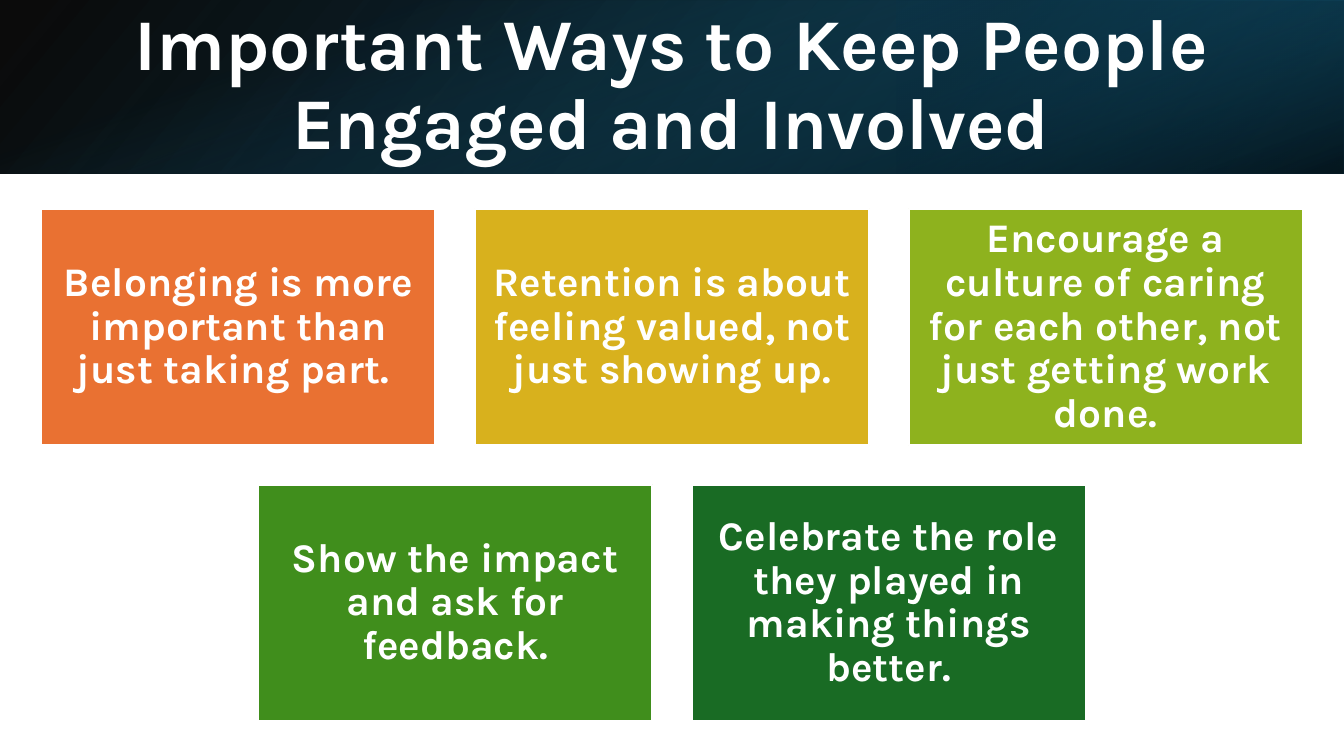
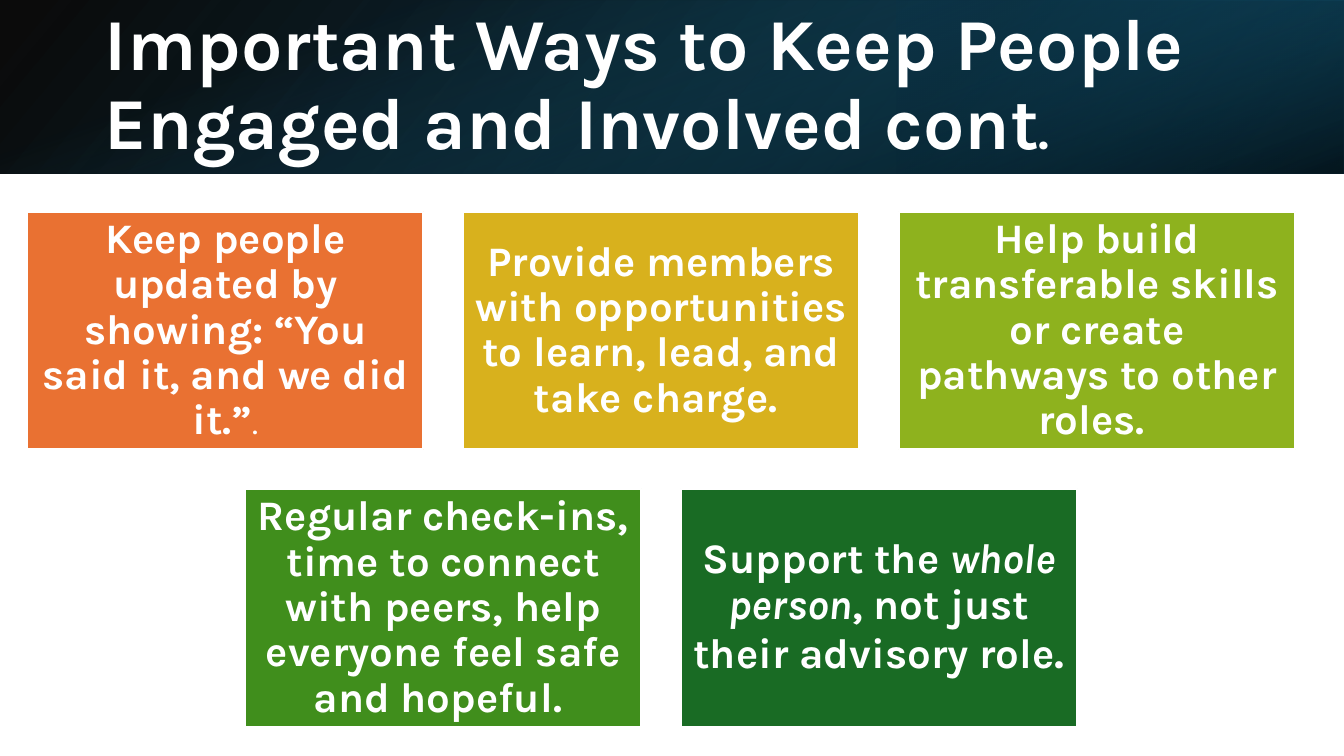
from lxml import etree
from pptx import Presentation
from pptx.dml import color
from pptx.enum import shapes, text
from pptx.oxml import ns
from pptx.util import Inches, Pt

WIDE, HIGH, BAND = 13.33, 7.5, 1.72
WHITE = "FFFFFF"
FILLS = ["E97132", "D8B11D", "8EB21E", "408E1C", "196B24"]
BANDS = [
    ((0, 0, WIDE, BAND), 0, True, 140,
     [(0, "000000", 96), (100, "104862", 100)]),
    ((8.89, 0, 4.44, BAND), 180, True, 320,
     [(19, "0B3041", 68), (100, "156082", 79)]),
    ((5.8, -5.8, BAND, WIDE), 90, False, 340,
     [(23, "156082", 0), (99, "000000", 74)]),
]
ALIGN = text.PP_ALIGN
HEAD = "Important Ways to Keep People Engaged and Involved"


def rgb(code):
    return color.RGBColor.from_string(code)


def put(item, style):
    for name, value in style.items():
        setattr(item, name, value)


def node(root, tag, **attrs):
    return etree.SubElement(root, ns.qn("a:" + tag),
                            {key: str(value) for key, value in attrs.items()})


class Deck:
    font = {"name": "Karla", "bold": True}

    def __init__(self):
        self.file = Presentation()
        self.file.slide_width = Inches(WIDE)
        self.file.slide_height = Inches(HIGH)
        self.slide = None

    def page(self):
        self.slide = self.file.slides.add_slide(self.file.slide_layouts[5])
        for band in BANDS:
            self.band(*band)

    def rect(self, area):
        shape = self.slide.shapes.add_shape(
            shapes.MSO_SHAPE.RECTANGLE, *map(Inches, area))
        shape.shadow.inherit = False
        return shape

    def band(self, area, turn, flip, angle, stops):
        shape = self.rect(area)
        shape.rotation = turn
        shape.line.fill.background()
        if flip:
            shape._element.spPr.find(ns.qn("a:xfrm")).set("flipH", "1")
        shape.fill.gradient()
        grad = shape._element.spPr.find(ns.qn("a:gradFill"))
        for child in list(grad):
            grad.remove(child)
        items = node(grad, "gsLst")
        for place, code, alpha in stops:
            stop = node(items, "gs", pos=place * 1000)
            tone = node(stop, "srgbClr", val=code)
            node(tone, "alpha", val=alpha * 1000)
        node(grad, "lin", ang=angle * 60000, scaled=0)

    def label(self, shape, runs, size, align, inset):
        frame = shape.text_frame
        put(frame, {"word_wrap": True, "auto_size": text.MSO_AUTO_SIZE.NONE,
                    "vertical_anchor": text.MSO_ANCHOR.MIDDLE, **inset})
        para = frame.paragraphs[0]
        put(para, {"alignment": align, "line_spacing": 0.9})
        for words, style in runs:
            run = para.add_run()
            run.text = words
            put(run.font, {**self.font, "size": Pt(size), **style})
            run.font.color.rgb = rgb(WHITE)

    def title(self, area, runs, size, align):
        shape = self.slide.shapes.title
        names = ("left", "top", "width", "height")
        put(shape, dict(zip(names, map(Inches, area))))
        self.slide.shapes._spTree.append(shape._element)
        self.label(shape, runs, size, align, {})

    def card(self, area, fill, runs, size):
        shape = self.rect(area)
        shape.fill.solid()
        shape.fill.fore_color.rgb = rgb(fill)
        shape.line.color.rgb = rgb(WHITE)
        shape.line.width = Pt(1.5)
        sides = ("left", "top", "right", "bottom")
        inset = {"margin_" + side: Inches(0.12) for side in sides}
        self.label(shape, runs, size, ALIGN.CENTER, inset)

    def cards(self, left, top, width, size, texts):
        high, step, drop = width * 0.6, width * 1.1, width * 0.7
        for i, (fill, runs) in enumerate(zip(FILLS, texts)):
            row, col = divmod(i, 3)
            area = (left + (col + row / 2) * step, top + row * drop, width, high)
            self.card(area, fill, runs, size)


def main():
    deck = Deck()
    deck.page()
    deck.title((0.89, 0.38, 11.53, 0.96), [(HEAD, {})], 52, ALIGN.CENTER)
    deck.cards(0.41, 2.07, 3.91, 29, [
        [("Belonging is more important than just taking part. ", {})],
        [("Retention is about feeling valued, not just showing up.", {})],
        [("Encourage a culture of caring for each other, "
          "not just getting work done.", {})],
        [("Show the impact and ask for feedback.", {})],
        [("Celebrate the role they played in making things better.", {})],
    ])
    deck.page()
    deck.title((0.94, 0.38, 11.55, 0.96),
               [(HEAD + " cont", {}), (".", {"size": Pt(36)})],
               52.2, ALIGN.LEFT)
    deck.cards(0.27, 2.1, 3.93, 30, [
        [("Keep people updated by showing: “You said it, and we did it.”", {}),
         (".", {"size": Pt(24), "bold": False})],
        [("Provide members with opportunities to learn, lead, "
          "and take charge. ", {})],
        [("Help build transferable skills or create pathways "
          "to other roles. ", {})],
        [("Regular check-ins, time to connect with peers, "
          "help everyone feel safe and hopeful. ", {})],
        [("Support the ", {}), ("whole person", {"italic": True}),
         (", not just their advisory role", {}), (".", {"size": Pt(33)})],
    ])
    deck.file.save("out.pptx")


if __name__ == "__main__":
    main()
